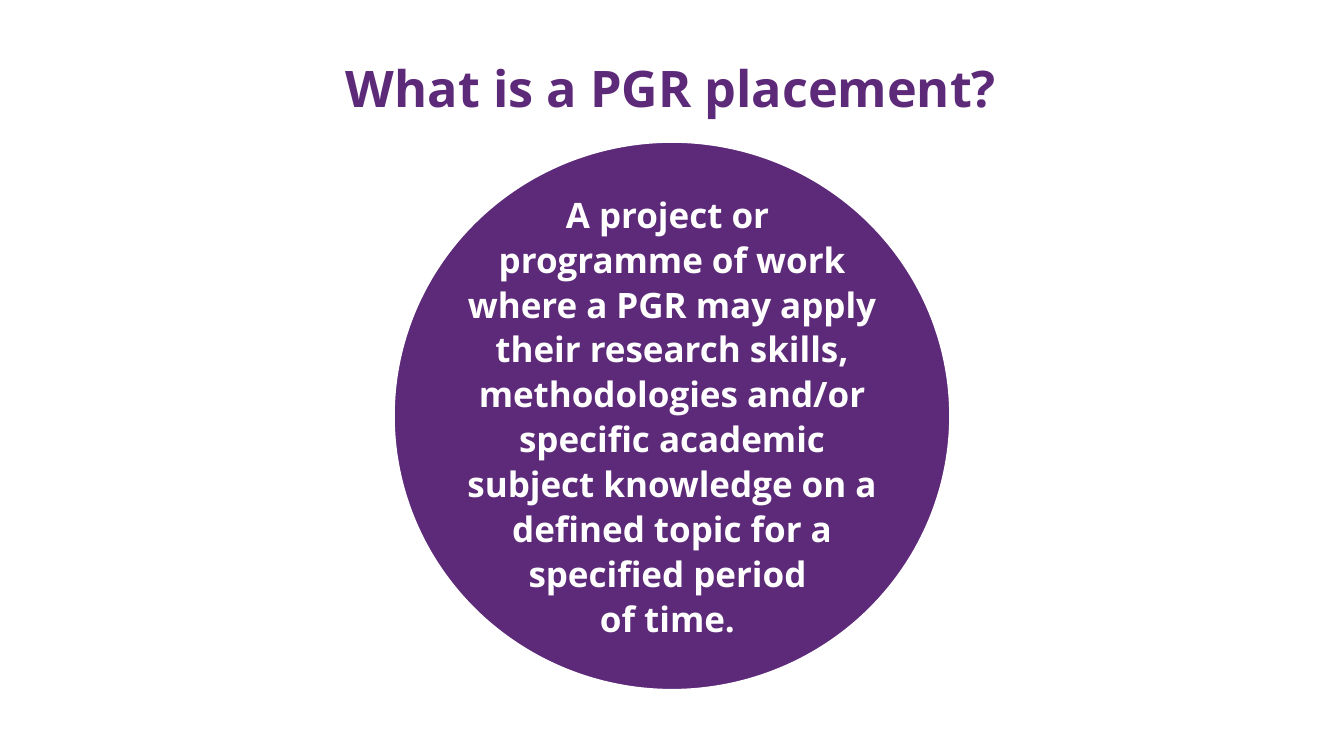
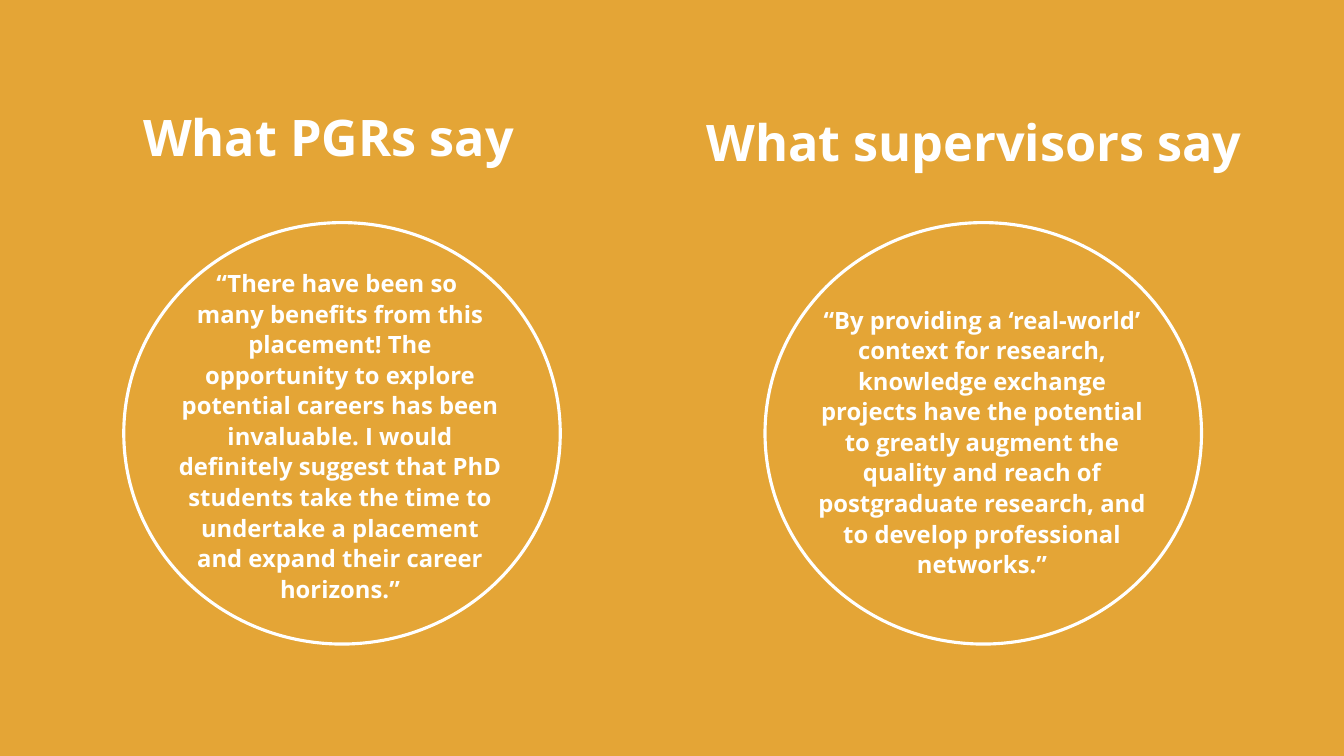
from dataclasses import dataclass
from typing import Optional

from pptx import Presentation
from pptx.dml.color import RGBColor
from pptx.enum.shapes import MSO_SHAPE
from pptx.enum.text import MSO_ANCHOR, MSO_AUTO_SIZE, PP_ALIGN
from pptx.slide import Slide
from pptx.text.text import TextFrame
from pptx.util import Cm, Pt


@dataclass(frozen=True)
class Theme:
    font: str = "Open Sans"
    white: RGBColor = RGBColor.from_string("FFFFFF")
    purple: RGBColor = RGBColor.from_string("5D2979")
    amber: RGBColor = RGBColor.from_string("E4A536")
    heading_size: float = 36
    definition_size: float = 25
    quote_size: float = 17
    outline: float = 2.25
    line_spacing: float = 1.07
    space_after: float = 8


THEME = Theme()


@dataclass(frozen=True)
class Box:
    left: float
    top: float
    width: float
    height: float

    def lengths(self) -> tuple[Cm, Cm, Cm, Cm]:
        return Cm(self.left), Cm(self.top), Cm(self.width), Cm(self.height)


@dataclass(frozen=True)
class Statement:
    heading: str
    heading_box: Box
    message: str
    message_box: Box
    circle: Box


@dataclass(frozen=True)
class Page:
    background: RGBColor
    heading_color: RGBColor
    circle_color: RGBColor
    message_size: float
    statements: tuple[Statement, ...]


PAGES = (
    Page(THEME.white, THEME.purple, THEME.purple, THEME.definition_size, (
        Statement(
            "What is a PGR placement?",
            Box(1.7, 0.61, 30.43, 3.18),
            "A project or \vprogramme of work where a PGR may apply their research "
            "skills, methodologies and/or specific academic subject knowledge on a "
            "defined topic for a specified period \vof time. ",
            Box(11.13, 4.67, 11.61, 11.63),
            Box(9.91, 3.56, 14.05, 13.84),
        ),
    )),
    Page(THEME.amber, THEME.white, THEME.amber, THEME.quote_size, (
        Statement(
            "What PGRs say ",
            Box(1.93, 1.85, 13.03, 3.18),
            "“There have been so \vmany benefits from this placement! The opportunity "
            "to explore potential careers has been invaluable. I would definitely "
            "suggest that PhD students take the time to undertake a placement and "
            "expand their career horizons.”",
            Box(4.19, 6.6, 8.76, 9.07),
            Box(3.12, 5.61, 11, 10.62),
        ),
        Statement(
            "What supervisors say ",
            Box(17.78, 1.96, 13.54, 3.18),
            "“By providing a ‘real-world’ context for research, knowledge exchange "
            "projects have the potential to greatly augment the quality and reach of "
            "postgraduate research, and to develop professional networks.”",
            Box(20.37, 7.52, 8.76, 7.21),
            Box(19.28, 5.61, 11, 10.62),
        ),
    )),
)


def write_text(frame: TextFrame, text: str, *, size: float, color: RGBColor,
               anchor: MSO_ANCHOR = MSO_ANCHOR.TOP, inset: Optional[float] = None,
               line_spacing: float = 1.0, space_after: float = 0) -> None:
    frame.word_wrap = True
    frame.auto_size = MSO_AUTO_SIZE.NONE
    frame.vertical_anchor = anchor
    if inset is not None:
        frame.margin_left = frame.margin_right = Cm(inset)
        frame.margin_top = frame.margin_bottom = Cm(inset)
    paragraph = frame.paragraphs[0]
    paragraph.text = text
    paragraph.alignment = PP_ALIGN.CENTER
    paragraph.line_spacing = line_spacing
    paragraph.space_before = Pt(0)
    paragraph.space_after = Pt(space_after)
    for run in paragraph.runs:
        run.font.name = THEME.font
        run.font.size = Pt(size)
        run.font.bold = True
        run.font.color.rgb = color


def add_heading(slide: Slide, text: str, box: Box, color: RGBColor, is_title: bool) -> None:
    if is_title:
        heading = slide.shapes.title
        heading.left, heading.top, heading.width, heading.height = box.lengths()
    else:
        heading = slide.shapes.add_textbox(*box.lengths())
    write_text(heading.text_frame, text, size=THEME.heading_size, color=color,
               anchor=MSO_ANCHOR.MIDDLE, inset=0)


def add_circle(slide: Slide, box: Box, color: RGBColor) -> None:
    circle = slide.shapes.add_shape(MSO_SHAPE.OVAL, *box.lengths())
    circle.shadow.inherit = False
    circle.fill.solid()
    circle.fill.fore_color.rgb = color
    circle.line.color.rgb = THEME.white
    circle.line.width = Pt(THEME.outline)


def add_message(slide: Slide, text: str, box: Box, size: float) -> None:
    message = slide.shapes.add_textbox(*box.lengths())
    write_text(message.text_frame, text, size=size, color=THEME.white,
               line_spacing=THEME.line_spacing, space_after=THEME.space_after)


def add_page(presentation: Presentation, page: Page) -> None:
    slide = presentation.slides.add_slide(presentation.slide_layouts.get_by_name("Title Only"))
    slide.background.fill.solid()
    slide.background.fill.fore_color.rgb = page.background
    for position, statement in enumerate(page.statements):
        add_heading(slide, statement.heading, statement.heading_box,
                    page.heading_color, is_title=position == 0)
        add_circle(slide, statement.circle, page.circle_color)
        add_message(slide, statement.message, statement.message_box, page.message_size)


def main() -> None:
    presentation = Presentation()
    presentation.slide_width = Cm(33.87)
    presentation.slide_height = Cm(19.05)
    for page in PAGES:
        add_page(presentation, page)
    presentation.save("out.pptx")


if __name__ == "__main__":
    main()
